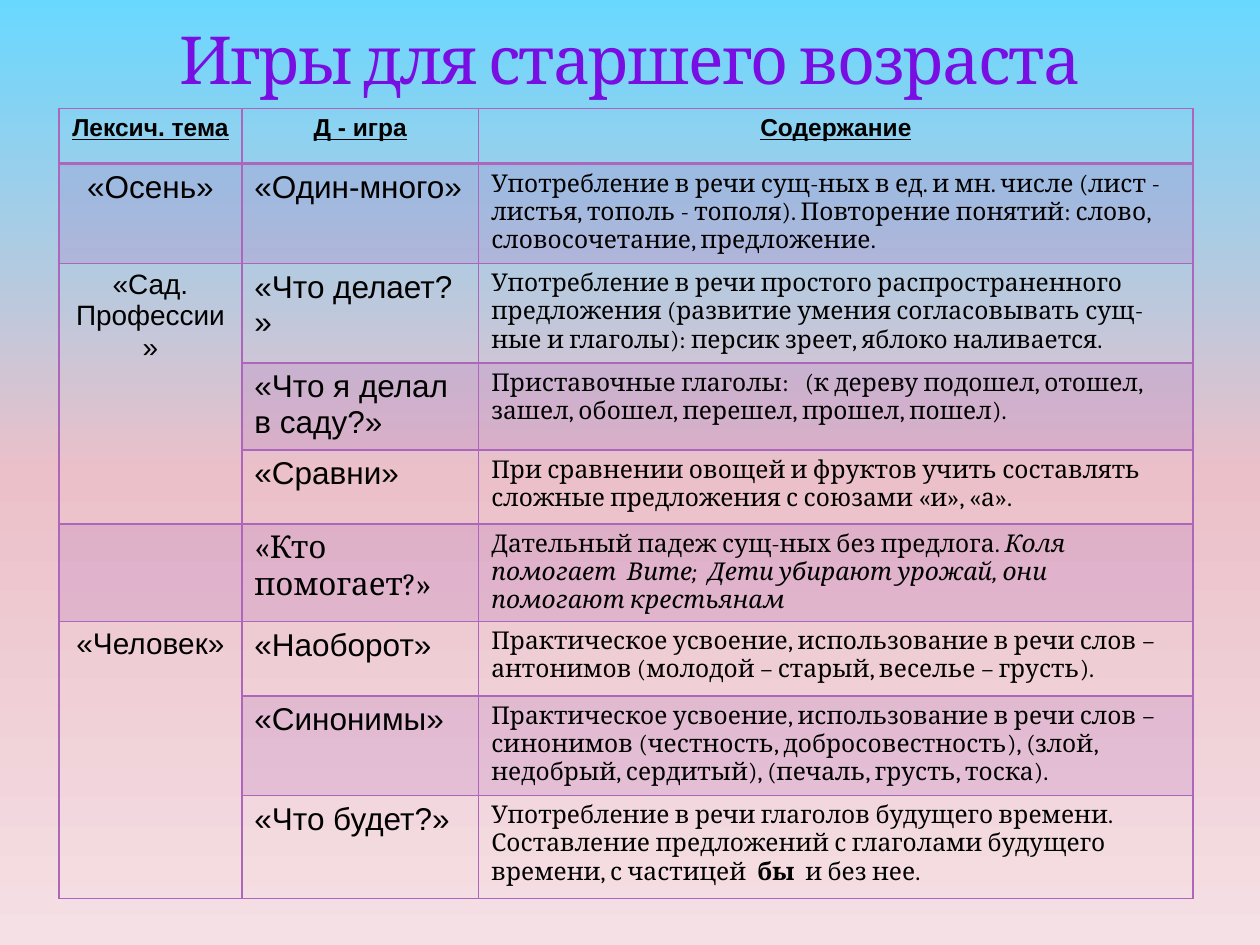
"""Builds a slide with a table of speech games for older preschool children."""
from lxml import etree
from pptx import Presentation
from pptx.dml.color import RGBColor
from pptx.enum import text
from pptx.oxml import ns
from pptx.util import Pt

TITLE = "Игры для старшего возраста"
HEADERS = ["Лексич. тема", "Д - игра", "Содержание"]
THEMES = [
    # first row, last row, wording, size
    (1, 1, "«Осень»", 18),
    (2, 4, "«Сад. Профессии»", 16),
    (5, 5, "", 18),
    (6, 8, "«Человек»", 17),
]
GAMES = [
    ("«Один-много»", "Arial", [
        ("Употребление в речи сущ-ных в ед. и мн. числе (лист - листья, тополь - тополя). "
         "Повторение понятий: слово, словосочетание, предложение.", "")]),
    ("«Что делает? »", "Arial", [
        ("Употребление в речи простого распространенного предложения (развитие умения "
         "согласовывать сущ-ные и глаголы): персик зреет, яблоко наливается.", "")]),
    ("«Что я делал в саду?»", "Arial", [
        ("Приставочные глаголы:   (к дереву подошел, отошел, зашел, обошел, перешел, "
         "прошел, пошел).", "")]),
    ("«Сравни»", "Arial", [
        ("При сравнении овощей и фруктов учить составлять  сложные предложения "
         "с союзами «и», «а».", "")]),
    ("«Кто помогает?»", "Cambria", [
        ("Дательный падеж сущ-ных без предлога. ", ""),
        ("Коля  помогает  Вите;  Дети убирают урожай, они помогают крестьянам", "italic")]),
    ("«Наоборот»", "Arial", [
        ("Практическое усвоение, использование в речи слов – антонимов "
         "(молодой – старый, веселье – грусть).", "")]),
    ("«Синонимы»", "Arial", [
        ("Практическое усвоение, использование в речи слов – синонимов (честность, "
         "добросовестность), (злой, недобрый, сердитый), (печаль, грусть, тоска).", "")]),
    ("«Что будет?»", "Arial", [
        ("Употребление в речи глаголов будущего времени. Составление предложений "
         "с глаголами будущего времени, с частицей  ", ""),
        ("бы", "bold"),
        ("  и без нее.", "")]),
]
BACKGROUND = [(0, "69D8FF"), (50, "EBC0C9"), (100, "F5E0E5")]
PURPLE, BLACK, VIOLET, PLUM = "AC66BB", "000000", "780EE2", "9C3888"
COLUMN_WIDTHS = [104.4, 135.4, 408.2]
ROW_HEIGHTS = [31.7, 56.9, 56.9, 49.7, 42.5, 49.7, 42.5, 56.9, 59]


def rgb(value):
    return RGBColor.from_string(value)


def add_color(parent, value, alpha=None):
    color = etree.SubElement(parent, ns.qn("a:srgbClr"), val=value)
    if alpha is not None:
        etree.SubElement(color, ns.qn("a:alpha"), val=str(alpha * 1000))


def add_solid(parent, value, alpha=None):
    add_color(etree.SubElement(parent, ns.qn("a:solidFill")), value, alpha)


def paint_background(slide):
    fill = slide.background.fill
    fill.gradient()
    fill.gradient_angle = 270
    stops = slide.background._cSld.find(".//" + ns.qn("a:gsLst"))
    stops.clear()
    for position, value in BACKGROUND:
        add_color(etree.SubElement(stops, ns.qn("a:gs"), pos=str(position * 1000)), value)


def style(paragraph, font, size, value=BLACK, centered=False):
    paragraph.alignment = text.PP_ALIGN.CENTER if centered else text.PP_ALIGN.LEFT
    paragraph.font.name, paragraph.font.size = font, Pt(size)
    paragraph.font.color.rgb = rgb(value)


def add_title(slide):
    title = slide.shapes.add_textbox(Pt(36), Pt(12), Pt(648), Pt(44))
    frame = title.text_frame
    frame.word_wrap = True
    frame.vertical_anchor = text.MSO_ANCHOR.BOTTOM
    frame.margin_top = frame.margin_bottom = 0
    paragraph = frame.paragraphs[0]
    style(paragraph, "Cambria", 37.8, VIOLET, True)
    run = paragraph.add_run()
    run.text = TITLE
    properties = run._r.get_or_add_rPr()
    properties.set("spc", "-100")
    outline = etree.SubElement(properties, ns.qn("a:ln"), w=str(Pt(0.25)))
    add_solid(outline, PLUM, 25)


def format_cell(cell, row, column):
    properties = cell._tc.get_or_add_tcPr()
    for side in "LRTB":
        heavy = (row, side) in [(0, "B"), (1, "T")]
        border = etree.SubElement(properties, ns.qn("a:ln" + side), w=str(Pt(2 if heavy else 1)))
        add_solid(border, PURPLE)
    merged_theme = column == 0 and any(first <= row <= last and first < last
                                       for first, last, *_ in THEMES)
    if row % 2 and not merged_theme:
        add_solid(properties, PURPLE, 20)
    else:
        cell.fill.background()


def write(cell, runs, font, size, centered=False):
    paragraph = cell.text_frame.paragraphs[0]
    style(paragraph, font, size, centered=centered)
    for wording, emphasis in runs:
        run = paragraph.add_run()
        run.text = wording
        if emphasis:
            setattr(run.font, emphasis, True)
    return paragraph


def add_games(slide):
    games = slide.shapes.add_table(len(ROW_HEIGHTS), len(COLUMN_WIDTHS), Pt(33.8), Pt(61.9),
                                   Pt(sum(COLUMN_WIDTHS)), Pt(sum(ROW_HEIGHTS))).table
    games.first_row = games.horz_banding = False
    for column, width in zip(games.columns, COLUMN_WIDTHS):
        column.width = Pt(width)
    for row, height in zip(games.rows, ROW_HEIGHTS):
        row.height = Pt(height)
    for row in range(len(ROW_HEIGHTS)):
        for column in range(len(COLUMN_WIDTHS)):
            format_cell(games.cell(row, column), row, column)
    for column, header in enumerate(HEADERS):
        heading = write(games.cell(0, column), [(header, "")], "Arial", 14, True)
        heading.font.bold = heading.font.underline = True
    for first, last, theme, size in THEMES:
        cell = games.cell(first, 0)
        if last > first:
            cell.merge(games.cell(last, 0))
        if theme:
            write(cell, [(theme, "")], "Arial", size, True)
    for row, (game, font, content) in enumerate(GAMES, 1):
        write(games.cell(row, 1), [(game, "")], font, 18)
        write(games.cell(row, 2), content, "Cambria", 14)


def main():
    presentation = Presentation()
    presentation.slide_width, presentation.slide_height = Pt(720), Pt(540)
    slide = presentation.slides.add_slide(presentation.slide_layouts[6])
    paint_background(slide)
    add_games(slide)
    add_title(slide)
    presentation.save("out.pptx")


if __name__ == "__main__":
    main()
